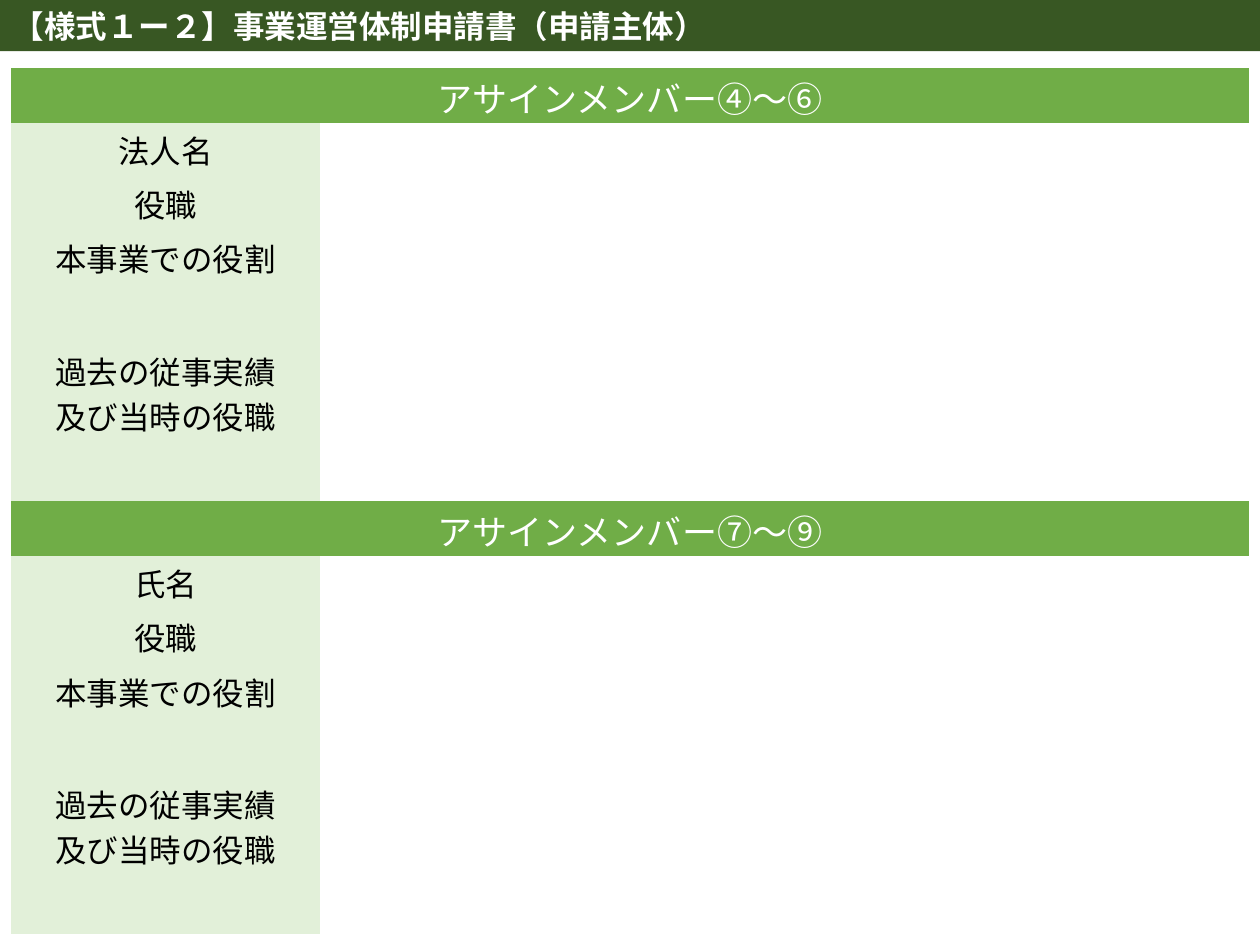
from dataclasses import dataclass

import pptx
import pptx.dml.color
import pptx.enum.text
import pptx.oxml.ns
import pptx.oxml.xmlchemy
import pptx.util

Cm = pptx.util.Cm
Pt = pptx.util.Pt
Align = pptx.enum.text.PP_ALIGN
Anchor = pptx.enum.text.MSO_ANCHOR
qn = pptx.oxml.ns.qn


@dataclass(frozen=True)
class Theme:
    dark: str = "385723"
    green: str = "70AD47"
    pale: str = "E2F0D9"
    white: str = "FFFFFF"
    black: str = "000000"
    head: int = 20
    body: int = 18
    latin: str = "Calibri"
    asian: str = "Noto Sans CJK JP"
    plain: str = "{2D5ABB26-0587-4C30-8999-92F81FD0307C}"


@dataclass(frozen=True)
class Row:
    text: str
    high: float = 1.09
    head: bool = False


@dataclass(frozen=True)
class Group:
    title: str
    first: str


THEME = Theme()
GROUPS = [
    Group("アサインメンバー④～⑥", "法人名"),
    Group("アサインメンバー⑦～⑨", "氏名"),
]
COLS = 4
WIDTH = 6.24


def apply(item: object, values: dict) -> None:
    for name, value in values.items():
        setattr(item, name, value)


def paint(item: object, color: str) -> None:
    item.fill.solid()
    item.fill.fore_color.rgb = pptx.dml.color.RGBColor.from_string(color)


def write(frame: object, text: str, size: int, color: str, face: str,
          bold: bool, align: object) -> None:
    frame.text = text
    for para in frame.paragraphs:
        para.alignment = align
        for run in para.runs:
            apply(run.font, {"name": face, "size": Pt(size), "bold": bold})
            run.font.color.rgb = pptx.dml.color.RGBColor.from_string(color)
            east = run.font._element.makeelement(qn("a:ea"), {"typeface": THEME.asian})
            run.font._element.find(qn("a:latin")).addnext(east)


def list_rows(group: Group) -> list[Row]:
    return [
        Row(group.title, 1.11, True),
        Row(group.first),
        Row("役職"),
        Row("本事業での役割"),
        Row("過去の従事実績\n及び当時の役職", 4.35),
    ]


def draw_title(slide: object, text: str) -> None:
    title = slide.shapes.title
    apply(title, {"left": 0, "top": 0, "width": Cm(25.4), "height": Cm(1.03)})
    paint(title, THEME.dark)
    frame = title.text_frame
    apply(frame, {
        "word_wrap": True,
        "auto_size": pptx.enum.text.MSO_AUTO_SIZE.NONE,
        "vertical_anchor": Anchor.MIDDLE,
    })
    write(frame, text, THEME.body, THEME.white, THEME.latin, True, Align.LEFT)


def draw_row(table: object, index: int, row: Row) -> None:
    table.rows[index].height = Cm(row.high)
    cells = [table.cell(index, col) for col in range(COLS)]
    for cell in cells:
        apply(cell, {
            "margin_top": Cm(0.08),
            "margin_bottom": Cm(0 if row.head else 0.08),
            "vertical_anchor": Anchor.TOP if row.head else Anchor.MIDDLE,
        })
        cell.fill.background()
    label = cells[0]
    if row.head:
        label.merge(cells[-1])
    paint(label, THEME.green if row.head else THEME.pale)
    write(label.text_frame, row.text,
          THEME.head if row.head else THEME.body,
          THEME.white if row.head else THEME.black,
          THEME.asian, False, Align.CENTER)


def draw_table(slide: object, rows: list[Row]) -> None:
    high = sum(row.high for row in rows)
    frame = slide.shapes.add_table(
        len(rows), COLS, Cm(0.22), Cm(1.37), Cm(WIDTH * COLS), Cm(high))
    table = frame.table
    apply(table, {"first_row": False, "horz_banding": False})
    for style in frame.element.iter(qn("a:tableStyleId")):
        style.text = THEME.plain
    for index, row in enumerate(rows):
        draw_row(table, index, row)


def main() -> None:
    deck = pptx.Presentation()
    apply(deck, {"slide_width": Cm(25.4), "slide_height": Cm(19.05)})
    slide = deck.slides.add_slide(deck.slide_layouts[5])
    draw_title(slide, "【様式１ー２】事業運営体制申請書（申請主体）")
    draw_table(slide, [row for group in GROUPS for row in list_rows(group)])
    deck.save("out.pptx")


if __name__ == "__main__":
    main()
